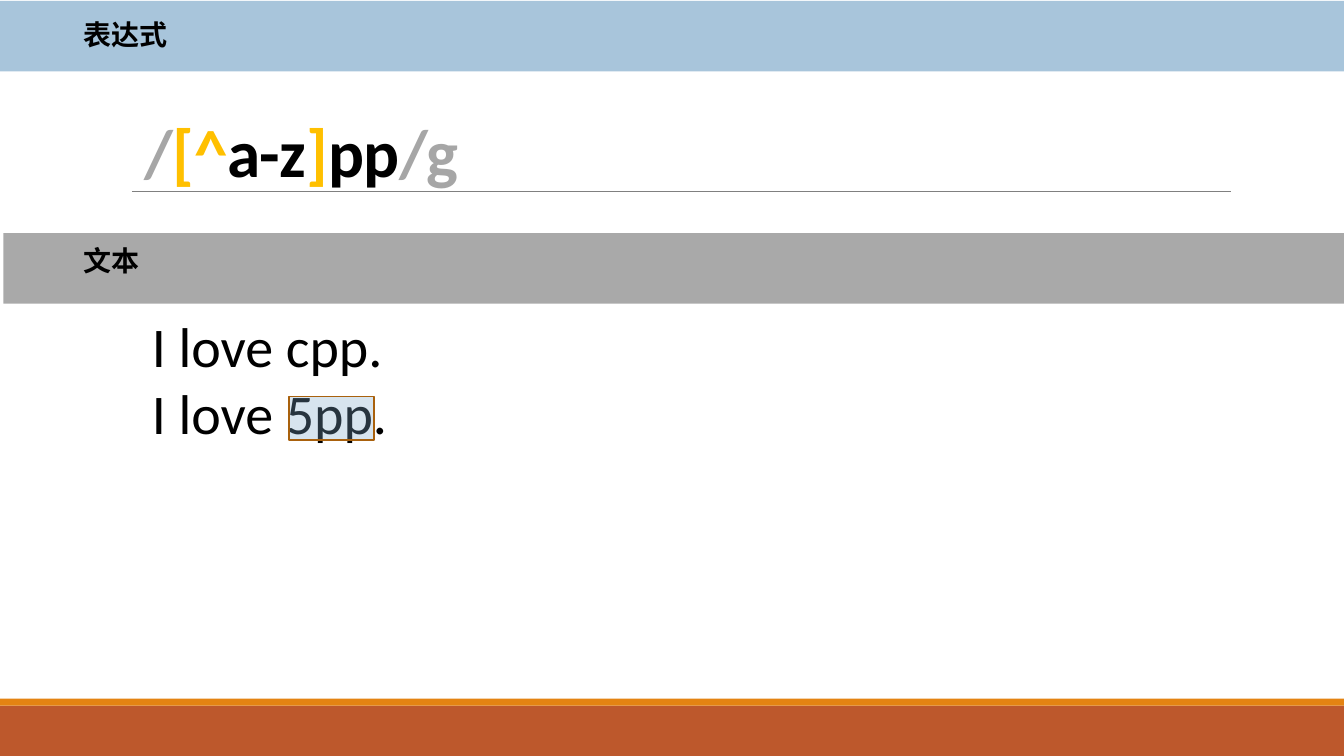
from pptx import Presentation
from pptx.dml.color import RGBColor
from pptx.enum.shapes import MSO_CONNECTOR, MSO_SHAPE
from pptx.enum.text import MSO_ANCHOR
from pptx.oxml.ns import qn
from pptx.util import Pt
from lxml import etree

RECT = MSO_SHAPE.RECTANGLE
LINE = MSO_CONNECTOR.STRAIGHT
TOP, BOTTOM = MSO_ANCHOR.TOP, MSO_ANCHOR.BOTTOM

BLACK = RGBColor(0x00, 0x00, 0x00)
GREY = RGBColor(0x80, 0x80, 0x80)
PALE = RGBColor(0xA6, 0xA6, 0xA6)
GOLD = RGBColor(0xFF, 0xC0, 0x00)
BLUE = RGBColor(0x7E, 0xA9, 0xCA)
RUST = RGBColor(0xBD, 0x58, 0x2C)
AMBER = RGBColor(0xE4, 0x83, 0x12)
BROWN = RGBColor(0xA9, 0x61, 0x0D)

LATIN = "Calibri"
HAN = "Noto Sans CJK SC"
WIDE = 960


def add_bar(slide, left, top, width, height, fill, alpha=100, edge=None):
    """Add a filled rectangle; alpha is its opacity in percent."""
    bar = slide.shapes.add_shape(RECT, Pt(left), Pt(top), Pt(width), Pt(height))
    bar.shadow.inherit = False
    bar.fill.solid()
    bar.fill.fore_color.rgb = fill
    if alpha < 100:
        color = bar.fill._xPr.find(qn("a:solidFill"))[0]
        etree.SubElement(color, qn("a:alpha")).set("val", str(alpha * 1000))
    if edge is None:
        bar.line.fill.background()
    else:
        bar.line.color.rgb = edge
        bar.line.width = Pt(1.25)


def add_rule(slide, left, right, top):
    """Add a thin horizontal line."""
    rule = slide.shapes.add_connector(LINE, Pt(left), Pt(top), Pt(right), Pt(top))
    rule.line.color.rgb = GREY
    rule.line.width = Pt(0.5)
    etree.SubElement(rule._element.spPr, qn("a:effectLst"))


def add_text(slide, box, lines, size, font=LATIN, bold=False,
             wrap=False, anchor=TOP, space=None, track=0):
    """Add a text box; each line is a list of (text, colour) runs."""
    frame = slide.shapes.add_textbox(*map(Pt, box)).text_frame
    frame.word_wrap = wrap
    frame.vertical_anchor = anchor
    for i, line in enumerate(lines):
        para = frame.add_paragraph() if i else frame.paragraphs[0]
        para.line_spacing = space
        para.font.size = Pt(size)
        para.font.bold = bold
        para.font.name = font
        props = para.font._element
        etree.SubElement(props, qn("a:ea")).set("typeface", font)
        if track:
            props.set("spc", str(round(track * 100)))
        for text, color in line:
            run = para.add_run()
            run.text = text
            run.font.color.rgb = color


def add_head(slide, left, top, fill, title, inset):
    """Add a section band with its label."""
    add_bar(slide, left, top, WIDE - left, 50.4, fill, 67)
    add_text(slide, (52.6, top + inset, 76, 31.7), [[(title, BLACK)]],
             20, HAN, bold=True)


def main():
    deck = Presentation()
    deck.slide_width, deck.slide_height = Pt(WIDE), Pt(540)
    slide = deck.slides.add_slide(deck.slide_layouts[6])

    # Footer bands
    add_bar(slide, 0, 504, WIDE, 36, RUST)
    add_bar(slide, 0, 499, WIDE, 5, AMBER)

    # Expression
    add_head(slide, 0, 0.7, BLUE, "表达式", 8)
    add_rule(slide, 94.3, 879, 136.8)
    regex = [("/", PALE), ("[^", GOLD), ("a-z", BLACK), ("]", GOLD),
             ("pp", BLACK), ("/g", PALE)]
    add_text(slide, (95.8, 25.9, 792, 114.5), [regex], 48, bold=True,
             wrap=True, anchor=BOTTOM, space=0.85, track=-0.5)

    # Sample text, with the match marked
    add_head(slide, 2.4, 166.6, GREY, "文本", 4)
    sample = [[("I love cpp.", BLACK)], [("I love 5pp.", BLACK)]]
    add_text(slide, (101.5, 218.9, 182.9, 104.4), sample, 40)
    add_bar(slide, 206.4, 283.2, 60.9, 31, BLUE, 31, BROWN)

    deck.save("out.pptx")


if __name__ == "__main__":
    main()
